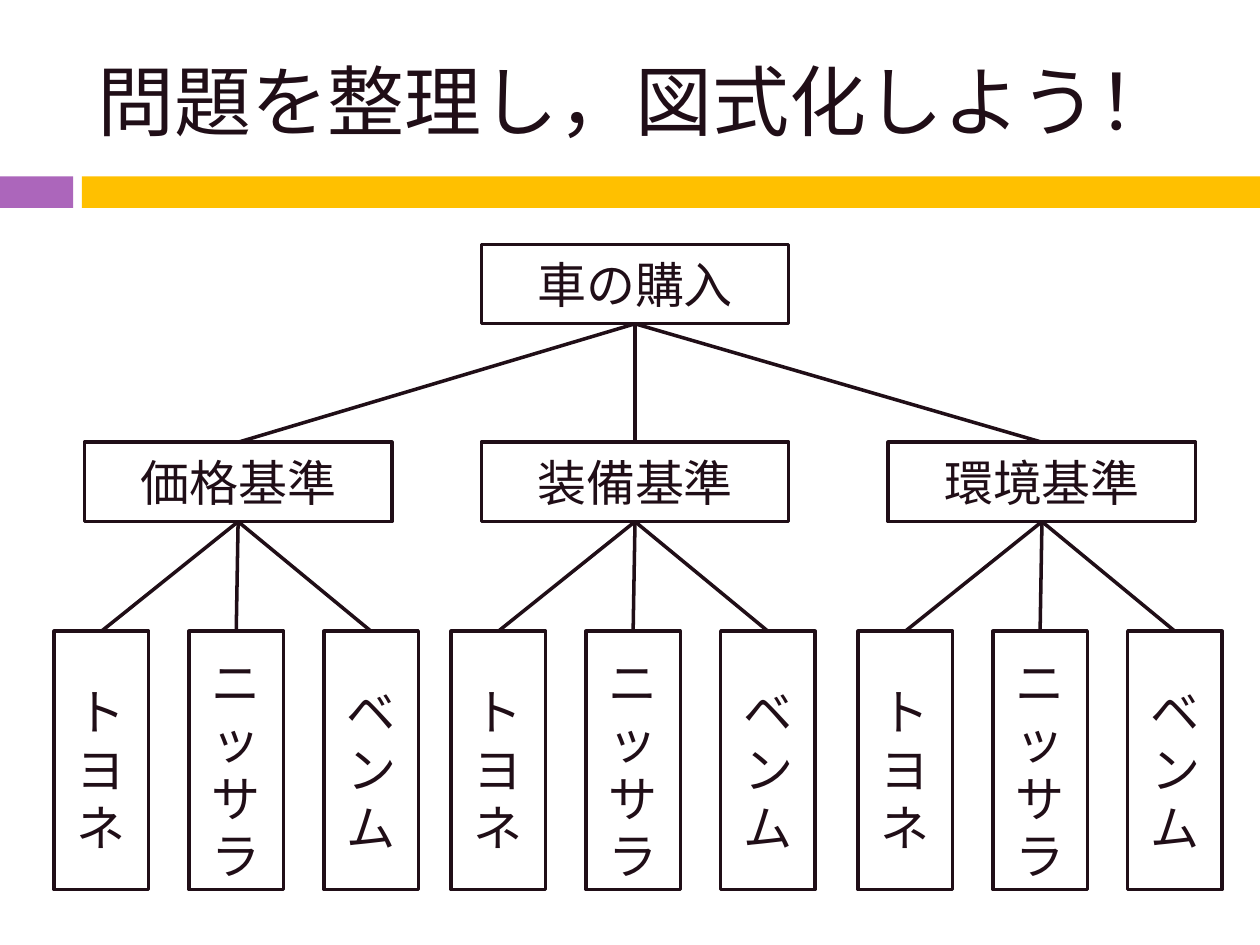
from dataclasses import dataclass

from lxml import etree
from pptx import Presentation
from pptx import util as u
from pptx.dml.color import RGBColor
from pptx.enum import shapes, text
from pptx.oxml import ns


@dataclass(frozen=True)
class Theme:
    """Colours, font and type sizes of the slide."""
    ink: RGBColor = RGBColor.from_string("200E17")
    purple: RGBColor = RGBColor.from_string("AC66BB")
    amber: RGBColor = RGBColor.from_string("FFC000")
    font: str = "Noto Sans CJK JP"
    title_size: u.Pt = u.Pt(44)
    box_size: u.Pt = u.Pt(28)
    leaf_leading: u.Pt = u.Pt(33)
    line_width: u.Pt = u.Pt(2)


THEME = Theme()
GOAL = "車の購入"
CRITERIA = {"価格基準": 0.67, "装備基準": 3.82, "環境基準": 7.05}
CARS = ["トヨネ", "ニッサラ", "ベンム"]
BOX_WIDTH, BOX_HEIGHT = 2.44, 0.63
LEAF_WIDTH, LEAF_HEIGHT = 0.75, 2.05
LEAF_OFFSET, LEAF_PITCH = -0.24, 1.07
GOAL_TOP, CRITERIA_TOP, LEAF_TOP = 1.94, 3.51, 5.01


def style_paragraph(paragraph, size, alignment):
    """Set the font, size, colour and alignment of a paragraph."""
    font = paragraph.font
    font.size = size
    font.color.rgb = THEME.ink
    font.name = THEME.font
    etree.SubElement(font._element, ns.qn("a:ea"), typeface=THEME.font)
    paragraph.alignment = alignment


def add_title(slide, title):
    """Fill and place the title placeholder."""
    shape = slide.shapes.title
    shape.left, shape.top = u.Inches(0.67), u.Inches(0.25)
    shape.width, shape.height = u.Inches(8.92), u.Inches(1.08)
    shape.text_frame.text = title
    shape.text_frame.vertical_anchor = text.MSO_ANCHOR.MIDDLE
    style_paragraph(shape.text_frame.paragraphs[0], THEME.title_size, text.PP_ALIGN.LEFT)


def add_rectangle(slide, left, top, width, height):
    """Add a rectangle without a shadow."""
    shape = slide.shapes.add_shape(
        shapes.MSO_SHAPE.RECTANGLE,
        u.Inches(left), u.Inches(top), u.Inches(width), u.Inches(height))
    shape.shadow.inherit = False
    return shape


def add_bar(slide, left, width, color):
    """Add one filled part of the band under the title."""
    bar = add_rectangle(slide, left, 1.4, width, 0.25)
    bar.fill.solid()
    bar.fill.fore_color.rgb = color
    bar.line.fill.background()


def add_box(slide, label, left, top, width=BOX_WIDTH, height=BOX_HEIGHT):
    """Add an outlined box with a centred label."""
    box = add_rectangle(slide, left, top, width, height)
    box.fill.background()
    box.line.color.rgb = THEME.ink
    box.line.width = THEME.line_width
    frame = box.text_frame
    frame.text = label
    frame.word_wrap = True
    frame.vertical_anchor = text.MSO_ANCHOR.MIDDLE
    style_paragraph(frame.paragraphs[0], THEME.box_size, text.PP_ALIGN.CENTER)
    return box


def add_leaf(slide, label, left):
    """Add a narrow box whose label wraps to one character a line."""
    leaf = add_box(slide, label, left, LEAF_TOP, LEAF_WIDTH, LEAF_HEIGHT)
    leaf.text_frame.margin_top, leaf.text_frame.margin_bottom = u.Inches(0.14), 0
    leaf.text_frame.paragraphs[0].line_spacing = THEME.leaf_leading
    return leaf


def add_branch(slide, parent, child):
    """Join the bottom of a parent box to the top of a child box."""
    branch = slide.shapes.add_connector(shapes.MSO_CONNECTOR.STRAIGHT, 0, 0, 0, 0)
    branch.begin_connect(parent, 2)
    branch.end_connect(child, 0)
    branch.line.color.rgb = THEME.ink
    branch.line.width = THEME.line_width
    etree.SubElement(branch._element.spPr, ns.qn("a:effectLst"))


def add_tree(slide):
    """Draw the goal, its criteria and the cars under each criterion."""
    goal = add_box(slide, GOAL, CRITERIA["装備基準"], GOAL_TOP)
    for label, left in CRITERIA.items():
        criterion = add_box(slide, label, left, CRITERIA_TOP)
        add_branch(slide, goal, criterion)
        for index, car in enumerate(CARS):
            leaf = add_leaf(slide, car, left + LEAF_OFFSET + index * LEAF_PITCH)
            add_branch(slide, criterion, leaf)


def main():
    """Build and save the slide."""
    presentation = Presentation()
    presentation.slide_width, presentation.slide_height = u.Inches(10), u.Inches(7.5)
    slide = presentation.slides.add_slide(presentation.slide_layouts[5])
    add_bar(slide, 0, 0.58, THEME.purple)
    add_bar(slide, 0.65, 9.35, THEME.amber)
    add_title(slide, "問題を整理し，図式化しよう！")
    add_tree(slide)
    presentation.save("out.pptx")


if __name__ == "__main__":
    main()
